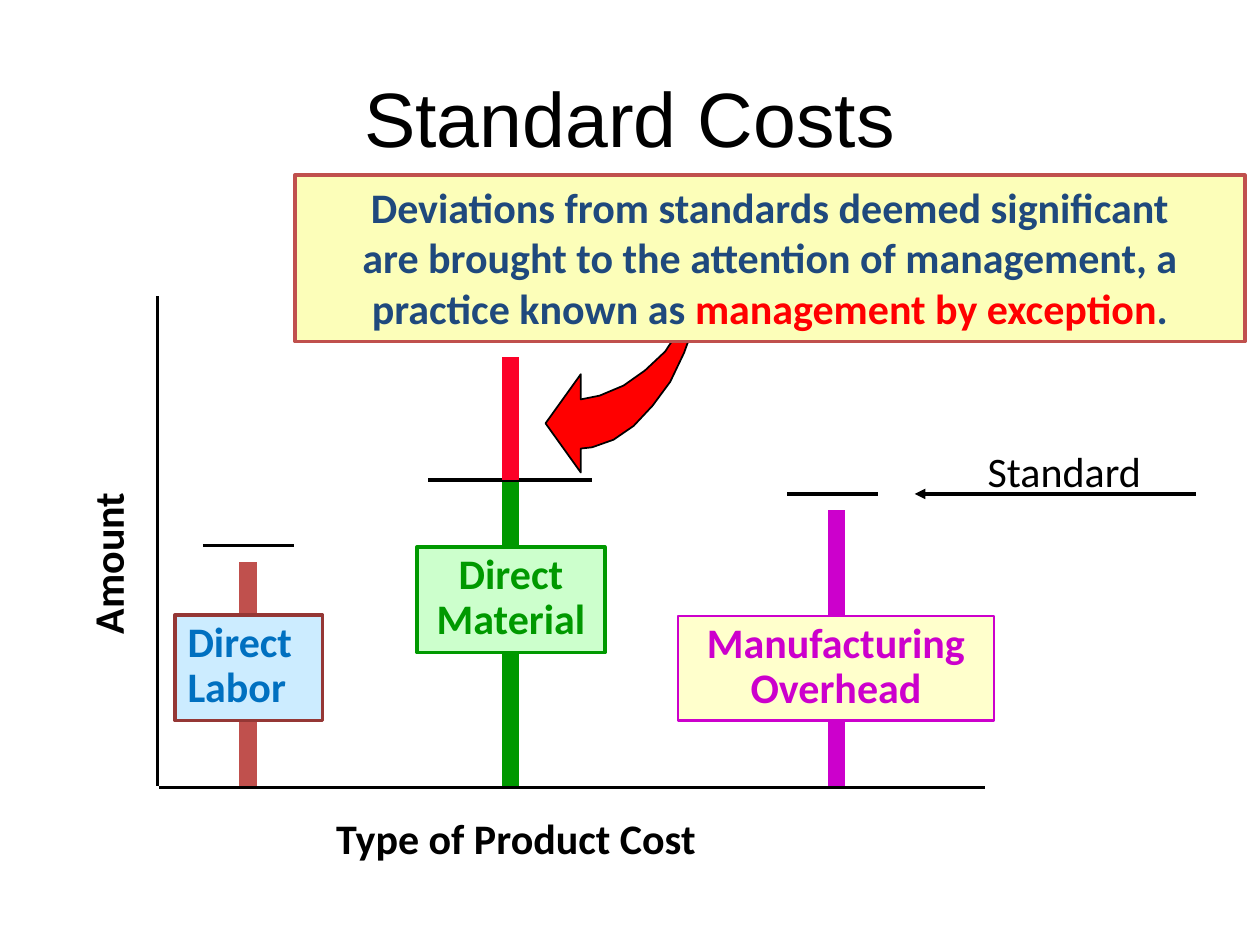
"""Build the Standard Costs slide on a grid of 100 columns by 75 rows."""
from lxml.etree import SubElement
from pptx import Presentation
from pptx.dml.color import RGBColor
from pptx.enum.shapes import MSO_CONNECTOR, MSO_SHAPE
from pptx.enum.text import MSO_ANCHOR, PP_ALIGN
from pptx.oxml.ns import qn
from pptx.util import Inches, Pt

LINE, RECT = MSO_CONNECTOR.STRAIGHT, MSO_SHAPE.RECTANGLE
TOP, MIDDLE = MSO_ANCHOR.TOP, MSO_ANCHOR.MIDDLE
LEFT, CENTER = PP_ALIGN.LEFT, PP_ALIGN.CENTER

BLACK = RGBColor(0x00, 0x00, 0x00)
RED = RGBColor(0xFF, 0x00, 0x00)
SCARLET = RGBColor(0xFC, 0x01, 0x28)
GREEN = RGBColor(0x00, 0x99, 0x00)
MINT = RGBColor(0xCC, 0xFF, 0xCC)
BRICK = RGBColor(0xC0, 0x50, 0x4D)
MAROON = RGBColor(0x95, 0x37, 0x35)
SKY = RGBColor(0xCC, 0xEC, 0xFF)
BLUE = RGBColor(0x00, 0x70, 0xC0)
NAVY = RGBColor(0x1F, 0x49, 0x7D)
PURPLE = RGBColor(0xCC, 0x00, 0xCC)
CREAM = RGBColor(0xFF, 0xFF, 0xCC)
YELLOW = RGBColor(0xFC, 0xFE, 0xB9)

deck = Presentation()
deck.slide_width, deck.slide_height = Inches(10), Inches(7.5)
COL, ROW = deck.slide_width // 100, deck.slide_height // 75
shapes = deck.slides.add_slide(deck.slide_layouts[6]).shapes


def draw(x1, y1, x2, y2, color=BLACK, width=2):
    line = shapes.add_connector(
        LINE, int(x1 * COL), int(y1 * ROW), int(x2 * COL), int(y2 * ROW))
    line.line.color.rgb = color
    line.line.width = Pt(width)
    SubElement(line._element.spPr, qn("a:effectLst"))
    return line


def write(spot, parts, fill=None, edge=None, width=2, align=LEFT,
          space=1.0, anchor=TOP, **style):
    x, y, w, h = spot
    place = int(x * COL), int(y * ROW), int(w * COL), int(h * ROW)
    if fill is None:
        box = shapes.add_textbox(*place)
    else:
        box = shapes.add_shape(RECT, *place)
        box.shadow.inherit = False
        box.fill.solid()
        box.fill.fore_color.rgb = fill
        box.line.color.rgb = edge
        box.line.width = Pt(width)
    frame = box.text_frame
    frame.word_wrap = True
    frame.vertical_anchor = anchor
    para = frame.paragraphs[0]
    para.alignment, para.line_spacing = align, space
    look = {"name": "Calibri", "size": Pt(24), "bold": True} | style
    for text, color in parts:
        for i, row in enumerate(text.split("\n")):
            if i:
                para.add_line_break()
            run = para.add_run()
            run.text = row
            run.font.color.rgb = color
            for key, value in look.items():
                setattr(run.font, key, value)
    return box


write((5, 3, 90, 12.5), [("Standard Costs", BLACK)], align=CENTER,
      anchor=MIDDLE, name="Arial", size=Pt(44), bold=False)

draw(12.5, 23.5, 12.5, 62.4)
draw(12.6, 62.5, 78.2, 62.5)

CURVE = [
    (46.1, 31.7), (47.6, 31.4), (49.5, 30.6), (51.2, 29.4), (52.8, 27.9),
    (54.1, 25.9), (55.2, 23.6), (56, 21.1), (56.5, 18.5), (56.6, 16.7),
    (56.4, 19.7), (56, 22.7), (55.2, 25.5), (54.3, 28), (53.2, 30.3),
    (51.8, 32.2), (50.3, 33.8), (48.7, 34.9), (47, 35.5), (46.1, 35.6),
    (46.1, 37.5), (43.3, 33.6), (46.1, 29.7)]
dots = [(int(x * COL), int(y * ROW)) for x, y in CURVE]
path = shapes.build_freeform(*dots[0])
path.add_line_segments(dots[1:], close=True)
arrow = path.convert_to_shape()
arrow.shadow.inherit = False
arrow.fill.solid()
arrow.fill.fore_color.rgb = RED
arrow.line.color.rgb = BLACK
arrow.line.width = Pt(1)

write((23.4, 13.9, 75.4, 13.2), [
    ("Deviations from standards deemed significant\n"
     "are brought to the attention of management, a\n"
     "practice known as ", NAVY),
    ("management by exception", RED), (".", NAVY)],
    YELLOW, BRICK, align=CENTER)

COSTS = [
    ("Direct\nMaterial", 40.5, 37, GREEN,
     (33.1, 43.4, 14.9, 8.4), MINT, GREEN, GREEN, 2, CENTER),
    ("Direct\nLabor", 19.7, 44.6, BRICK,
     (13.9, 48.8, 11.7, 8.4), SKY, MAROON, BLUE, 2, LEFT),
    ("Manufacturing\nOverhead", 66.4, 40.5, PURPLE,
     (53.8, 48.9, 25.1, 8.3), CREAM, PURPLE, PURPLE, 1.5, CENTER)]
for name, x, peak, bar, spot, fill, edge, ink, width, align in COSTS:
    draw(x, 62.4, x, peak, bar, 10)
    write(spot, [(name, ink)], fill, edge, width, align, 0.9)

for x, y, half in [(40.5, 38.1, 6.5), (19.7, 43.3, 3.6), (66.1, 39.2, 3.6)]:
    draw(x - half, y, x + half, y)
draw(40.5, 38.1, 40.5, 28.3, SCARLET, 10)

point = draw(72.6, 39.2, 94.9, 39.2)
SubElement(point.line._get_or_add_ln(), qn("a:headEnd"), type="triangle")

write((25.7, 64, 35.7, 5), [("Type of Product Cost", BLACK)])
write((1.2, 41.5, 14.6, 5), [("Amount", BLACK)]).rotation = 270
write((77.4, 34.9, 15.8, 5), [("Standard", BLACK)], bold=False)

deck.save("out.pptx")
